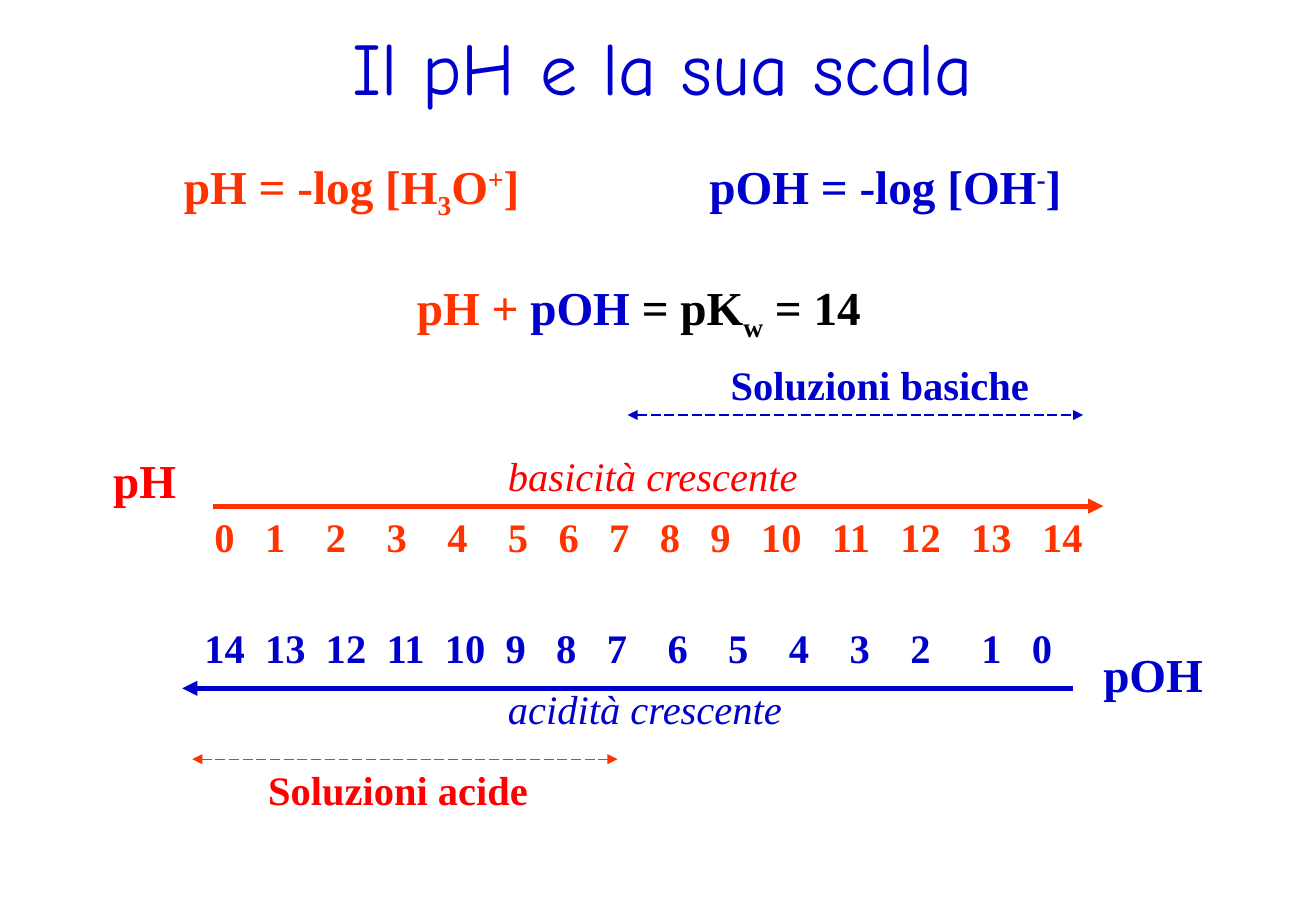
from dataclasses import dataclass
from itertools import accumulate

from lxml.etree import SubElement
from pptx import Presentation
from pptx.dml.color import RGBColor as Rgb
from pptx.enum.dml import MSO_LINE as Dash
from pptx.enum.shapes import MSO_CONNECTOR as Link
from pptx.enum.text import MSO_ANCHOR as Anchor, MSO_AUTO_SIZE as Fit, PP_ALIGN as Align
from pptx.oxml import parse_xml
from pptx.oxml.ns import nsdecls, qn
from pptx.util import Inches, Pt

# Grid of 130 columns by 90 rows, twelve to the inch
COLS, ROWS = 130, 90
WIDE, HIGH = Inches(10.83), Inches(7.5)
BLUE, ORANGE, RED, BLACK = "0000CC", "FF3300", "FF0000", "000000"
SERIF = "Times New Roman"
SUB, SUP = -25, 30
SLACK = 0.6  # spare columns that keep each label on one line
KERN = 0.24  # columns by which the pair 11 is tighter


@dataclass(frozen=True)
class Bit:
    text: str
    base: int = 0
    color: str = ""


@dataclass(frozen=True)
class Label:
    col: float
    row: float
    width: float
    color: str
    bits: tuple[Bit, ...]
    size: int = 28
    bold: bool = True
    gaps: tuple[int, ...] = ()


@dataclass(frozen=True)
class Arrow:
    start: int
    end: int
    row: int
    color: str
    both: bool = False


def x(col: float) -> int:
    return round(WIDE * col / COLS)


def y(row: float) -> int:
    return round(HIGH * row / ROWS)


def rgb(code: str) -> Rgb:
    return Rgb.from_string(code)


def style(font, name: str, size: int, color: str, bold: bool = False) -> None:
    font.name, font.size, font.bold = name, Pt(size), bold
    font.color.rgb = rgb(color)


def add_tabs(para, label: Label) -> None:
    """At 24 points a space is one column wide and a digit two."""
    marks = label.bits[0].text.split("\t")
    steps = [2 * len(mark) + gap - KERN * (mark == "11")
             for mark, gap in zip(marks, label.gaps)]
    tabs = parse_xml(f"<a:tabLst {nsdecls('a')}/>")
    for col in accumulate(steps):
        SubElement(tabs, qn("a:tab"), pos=str(x(col)), algn="l")
    para._p.get_or_add_pPr().insert(0, tabs)


def add_label(slide, label: Label) -> None:
    box = slide.shapes.add_textbox(
        x(label.col), y(label.row), x(label.width + SLACK),
        y(label.size / 4 - (label.size > 24) * 0.2))
    frame = box.text_frame
    frame.word_wrap = True
    frame.auto_size = Fit.SHAPE_TO_FIT_TEXT
    para = frame.paragraphs[0]
    style(para.font, SERIF, label.size, label.color, label.bold)
    para.font.italic = not label.bold
    if label.gaps:
        add_tabs(para, label)
    for bit in label.bits:
        run = para.add_run()
        run.text = bit.text
        if bit.color:
            run.font.color.rgb = rgb(bit.color)
        if bit.base:
            run._r.get_or_add_rPr().set("baseline", str(bit.base * 1000))


def add_arrow(slide, arrow: Arrow) -> None:
    line = slide.shapes.add_connector(
        Link.STRAIGHT, x(arrow.start), y(arrow.row), x(arrow.end), y(arrow.row))
    line.line.color.rgb = rgb(arrow.color)
    line.line.width = Pt(0.75 if arrow.both else 3)
    if arrow.both:
        line.line.dash_style = Dash.LONG_DASH
    edge = line.line._get_or_add_ln()
    for tip in ("a:headEnd", "a:tailEnd") if arrow.both else ("a:tailEnd",):
        SubElement(edge, qn(tip), type="triangle")
    SubElement(line._element.spPr, qn("a:effectLst"))


def add_title(slide, text: str) -> None:
    title = slide.shapes.title
    title.left, title.top, title.width, title.height = x(10), y(-1), x(111), y(15)
    frame = title.text_frame
    frame.text = text
    frame.vertical_anchor = Anchor.MIDDLE
    para = frame.paragraphs[0]
    para.alignment = Align.CENTER
    style(para.font, "Comic Neue", 44, BLUE)


def scale(values: range) -> tuple[Bit, ...]:
    return (Bit("\t".join(map(str, values))),)


LABELS = (
    # Definitions
    Label(17, 14.9, 36.1, ORANGE,
          (Bit("pH = -log [H"), Bit("3", SUB), Bit("O"), Bit("+", SUP), Bit("]"))),
    Label(68.9, 14.9, 37.4, BLUE, (Bit("pOH = -log [OH"), Bit("-", SUP), Bit("]"))),
    Label(40, 26.9, 46.7, BLACK,
          (Bit("pH + ", color=ORANGE), Bit("pOH ", color=BLUE), Bit("= pK"),
           Bit("w", SUB), Bit(" = 14"))),
    # pH scale
    Label(10, 44, 8.6, RED, (Bit("pH"),)),
    Label(49, 44, 31.2, RED, (Bit("basicità crescente"),), 24, False),
    Label(20, 50, 88.4, ORANGE, scale(range(15)), 24,
          gaps=(3, 4, 4, 4, 4) + (3,) * 9),
    # pOH scale
    Label(19, 61, 86.4, BLUE, scale(range(14, -1, -1)), 24,
          gaps=(2,) * 5 + (3, 3) + (4,) * 5 + (5, 3)),
    Label(107.8, 63.2, 12.2, BLUE, (Bit("pOH"),)),
    Label(49, 67, 29.6, BLUE, (Bit("acidità crescente"),), 24, False),
    # Ranges
    Label(71, 35, 32.9, BLUE, (Bit("Soluzioni basiche"),), 24),
    Label(25.3, 75, 28.1, RED, (Bit("Soluzioni acide"),), 24),
)

ARROWS = (
    Arrow(21, 109, 50, ORANGE),
    Arrow(106, 18, 68, BLUE),
    Arrow(62, 107, 41, BLUE, True),
    Arrow(19, 61, 75, ORANGE, True),
)


def main() -> None:
    deck = Presentation()
    deck.slide_width, deck.slide_height = WIDE, HIGH
    slide = deck.slides.add_slide(deck.slide_layouts[5])
    add_title(slide, "Il pH e la sua scala")
    for arrow in ARROWS:
        add_arrow(slide, arrow)
    for label in LABELS:
        add_label(slide, label)
    deck.save("out.pptx")


if __name__ == "__main__":
    main()
